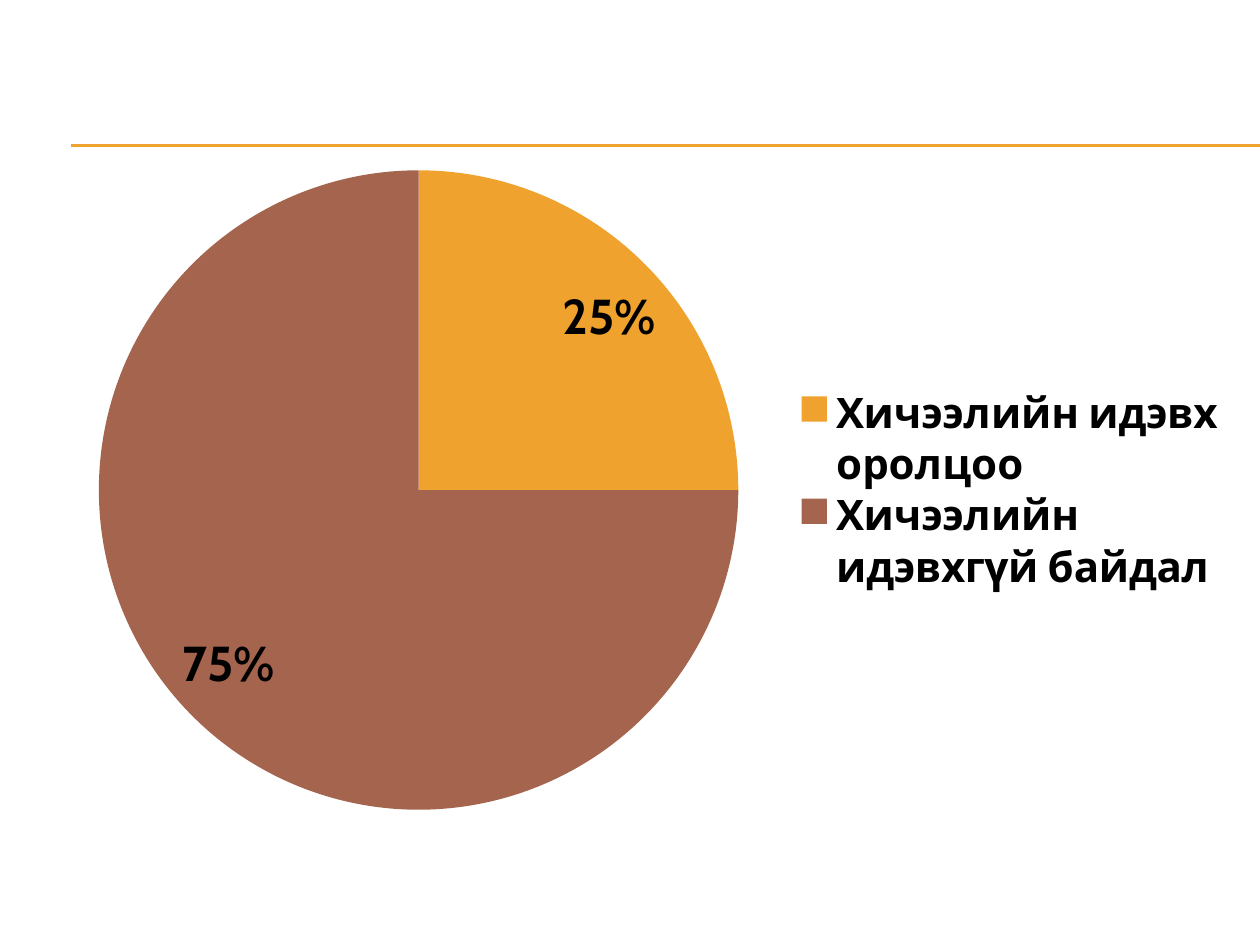
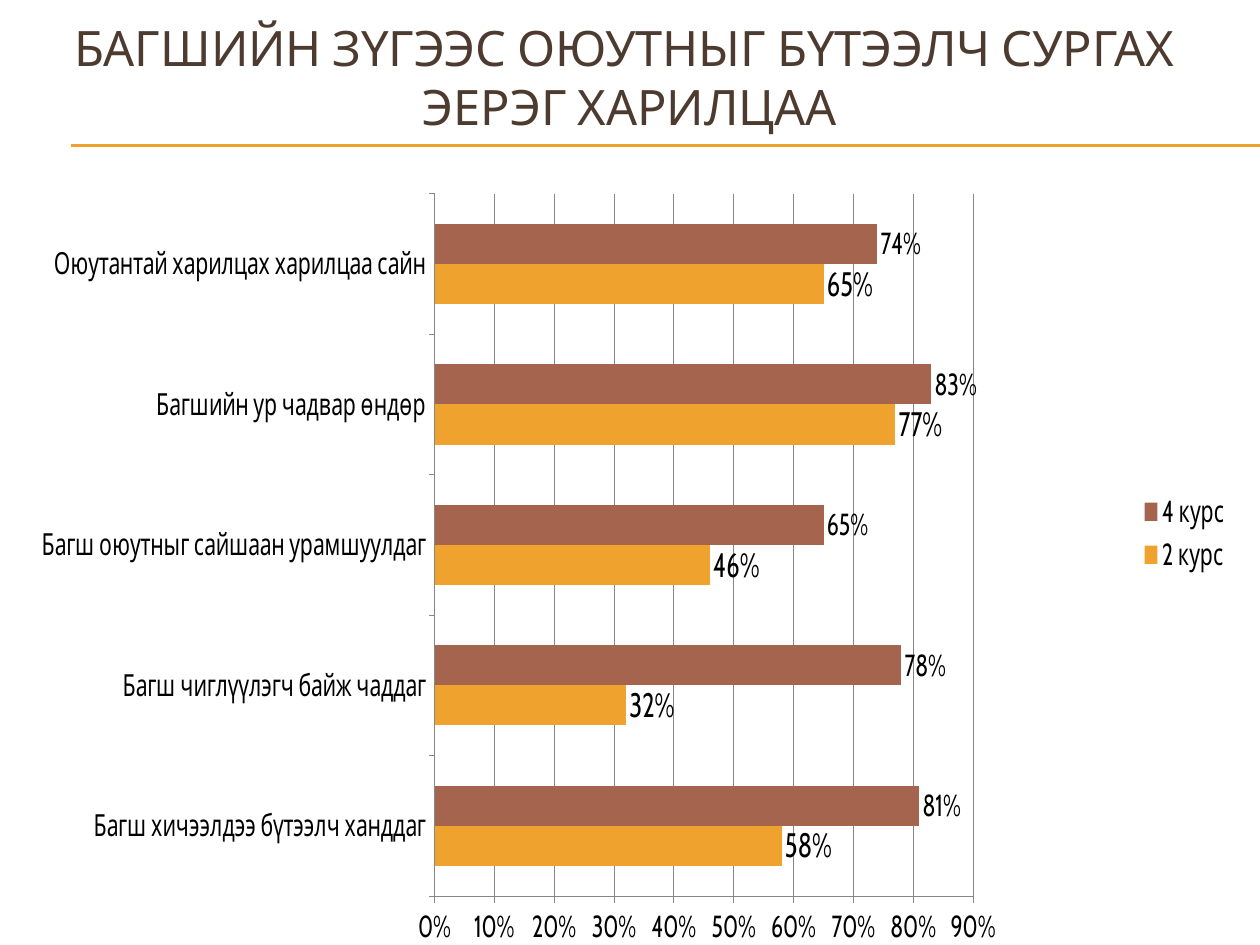
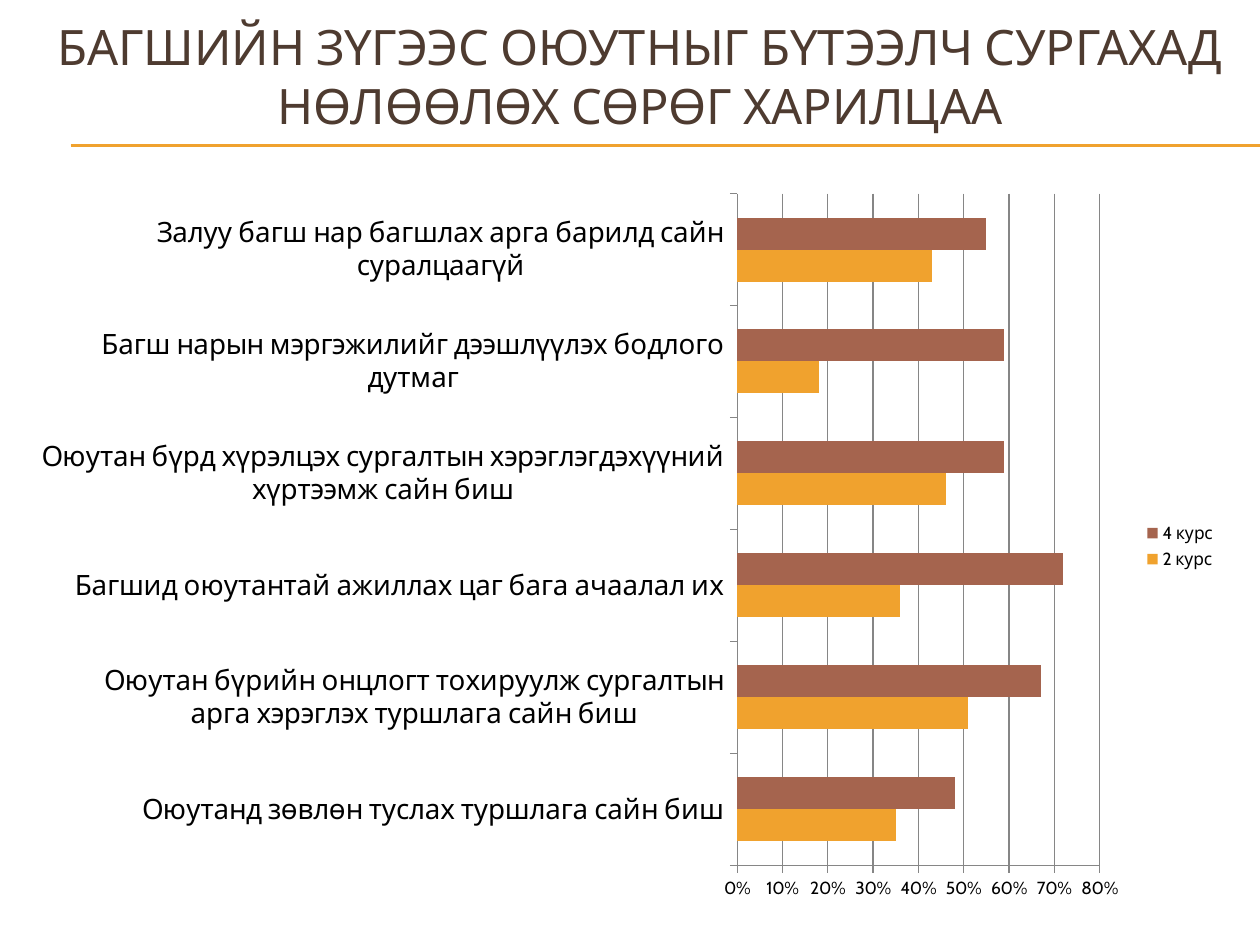
import pptx
import pptx.chart.data
import pptx.dml.color
import pptx.enum.chart
import pptx.enum.shapes
import pptx.enum.text
import pptx.oxml
import pptx.oxml.ns
import pptx.util

# Shared look
FONT = "Cabin"
GOLD, RUST, BROWN, BLACK, GREY = "F0A22E", "A5644E", "4E3B30", "000000", "868686"
TITLE_SIZE = 27.9
COLS, ROWS = 10, 7.5
LEFT = 0.33
RULES = (1.15, 1.16)

deck = pptx.Presentation()
deck.slide_width = pptx.util.Inches(10)
deck.slide_height = pptx.util.Inches(7.5)


def col(n):
    return int(deck.slide_width * n / COLS)


def row(n):
    return int(deck.slide_height * n / ROWS)


def grid(x, y, w, h):
    return col(x), row(y), col(w), row(h)


def color(code):
    return pptx.dml.color.RGBColor.from_string(code)


def style(font, size, code=BLACK, bold=False):
    font.name = FONT
    font.size = pptx.util.Pt(size)
    font.bold = bold
    font.color.rgb = color(code)


def paint(fill, code):
    fill.solid()
    fill.fore_color.rgb = color(code)


def add_rules(slide):
    """Draw the header rules and hand them to the master."""
    master = deck.slide_master.shapes.element
    for y in RULES:
        rule = slide.shapes.add_connector(
            pptx.enum.shapes.MSO_CONNECTOR.STRAIGHT,
            col(0.56), row(y), col(COLS), row(y))
        rule.line.color.rgb = color(GOLD)
        rule.line.width = pptx.util.Pt(0.75)
        rule.element.spPr.append(
            pptx.oxml.parse_xml("<a:effectLst %s/>" % pptx.oxml.ns.nsdecls("a")))
        master.insert_element_before(rule.element, "p:extLst")


def add_title(slide, area, lines):
    title = slide.shapes.title
    title.left, title.top, title.width, title.height = grid(*area)
    frame = title.text_frame
    frame.word_wrap = True
    frame.auto_size = pptx.enum.text.MSO_AUTO_SIZE.NONE
    frame.vertical_anchor = pptx.enum.text.MSO_ANCHOR.MIDDLE
    frame.margin_bottom = row(0.6)
    para = frame.paragraphs[0]
    para.alignment = pptx.enum.text.PP_ALIGN.CENTER
    for i, line in enumerate(lines):
        if i:
            para.add_line_break()
        run = para.add_run()
        run.text = line
        style(run.font, TITLE_SIZE, BROWN)


def set_place(chart, part, share):
    """Fix a chart part at shares (x, y, w, h) of the chart."""
    node = chart.element.find(".//" + pptx.oxml.ns.qn("c:" + part))
    old = node.find(pptx.oxml.ns.qn("c:layout"))
    if old is not None:
        node.remove(old)
    target = '<c:layoutTarget val="inner"/>' if part == "plotArea" else ""
    modes = "".join('<c:%sMode val="edge"/>' % k for k in "xy")
    sizes = "".join('<c:%s val="%s"/>' % pair for pair in zip("xywh", share))
    layout = pptx.oxml.parse_xml(
        "<c:layout %s><c:manualLayout>%s%s%s</c:manualLayout></c:layout>"
        % (pptx.oxml.ns.nsdecls("c"), target, modes, sizes))
    node.insert(0 if part == "plotArea" else 1, layout)


def add_chart(slide, kind, area, cats, series, size, key):
    data = pptx.chart.data.CategoryChartData(number_format="0%")
    data.categories = cats
    for name, vals in series:
        data.add_series(name, vals)
    chart = slide.shapes.add_chart(kind, *grid(*area), data).chart
    chart.has_title = False
    style(chart.font, size)
    chart.has_legend = True
    chart.legend.position = pptx.enum.chart.XL_LEGEND_POSITION.RIGHT
    chart.legend.include_in_layout = False
    style(chart.legend.font, key, bold=key > size)
    return chart


def add_labels(owner, size, spot, bold=False):
    labels = owner.data_labels
    labels.show_value = True
    labels.number_format = "0%"
    labels.number_format_is_linked = False
    labels.position = spot
    style(labels.font, size, bold=bold)


def add_pie(slide, area, cats, vals):
    chart = add_chart(slide, pptx.enum.chart.XL_CHART_TYPE.PIE, area, cats,
                      [("Series 1", vals)], 18, 24)
    pie = chart.plots[0].series[0]
    for i, code in enumerate((GOLD, RUST)):
        paint(pie.points[i].format.fill, code)
    add_labels(pie, 28, pptx.enum.chart.XL_LABEL_POSITION.BEST_FIT, True)
    return chart


def add_bars(slide, area, cats, second, fourth, top, size, cat_size):
    chart = add_chart(slide, pptx.enum.chart.XL_CHART_TYPE.BAR_CLUSTERED, area,
                      cats, [("2 курс", second), ("4 курс", fourth)],
                      size, size)
    bars = chart.plots[0]
    bars.vary_by_categories = False
    bars.gap_width = 150
    bars.overlap = 0
    for item, code in zip(bars.series, (GOLD, RUST)):
        paint(item.format.fill, code)
    # Axes
    values = chart.value_axis
    values.minimum_scale, values.maximum_scale = 0, top
    values.major_unit = 0.1
    values.has_major_gridlines = True
    values.major_gridlines.format.line.color.rgb = color(GREY)
    values.tick_labels.number_format = "0%"
    values.tick_labels.number_format_is_linked = False
    for axis, points in ((values, size), (chart.category_axis, cat_size)):
        axis.major_tick_mark = pptx.enum.chart.XL_TICK_MARK.OUTSIDE
        axis.format.line.color.rgb = color(GREY)
        style(axis.tick_labels.font, points)
    return chart


def main():
    bare, titled = deck.slide_layouts[6], deck.slide_layouts[5]

    # Share of active students
    slide = deck.slides.add_slide(bare)
    add_rules(slide)
    chart = add_pie(slide, (LEFT, 1.19, 9.5, 5.4),
                    ["Хичээлийн идэвх оролцоо", "Хичээлийн идэвхгүй байдал"],
                    [0.25, 0.75])
    set_place(chart, "plotArea", (0.04, 0.03, 0.55, 0.94))
    set_place(chart, "legend", (0.63, 0.35, 0.36, 0.3))

    # Positive attitudes
    slide = deck.slides.add_slide(titled)
    add_title(slide, (0.25, 0.42, 9.5, 0.92),
              ["БАГШИЙН ЗҮГЭЭС ОЮУТНЫГ БҮТЭЭЛЧ СУРГАХ ", "ЭЕРЭГ ХАРИЛЦАА"])
    chart = add_bars(
        slide, (LEFT, 1.17, 9.5, 6.33),
        ["Багш хичээлдээ бүтээлч ханддаг",
         "Багш чиглүүлэгч байж чаддаг",
         "Багш оюутныг сайшаан урамшуулдаг",
         "Багшийн ур чадвар өндөр",
         "Оюутантай харилцах харилцаа сайн"],
        [0.58, 0.32, 0.46, 0.77, 0.65], [0.81, 0.78, 0.65, 0.83, 0.74],
        0.9, 18, 18)
    set_place(chart, "plotArea", (0, 0.06, 0.67, 0.91))
    for item, size in zip(chart.plots[0].series, (20, 18)):
        add_labels(item, size, pptx.enum.chart.XL_LABEL_POSITION.OUTSIDE_END)

    # Negative attitudes
    slide = deck.slides.add_slide(titled)
    add_title(slide, (LEFT, 0.25, 9.5, 1.25),
              ["БАГШИЙН ЗҮГЭЭС ОЮУТНЫГ БҮТЭЭЛЧ СУРГАХАД НӨЛӨӨЛӨХ СӨРӨГ ХАРИЛЦАА"])
    add_bars(
        slide, (LEFT, 1.42, 9.42, 5.83),
        ["Оюутанд зөвлөн туслах туршлага сайн биш",
         "Оюутан бүрийн онцлогт тохируулж сургалтын арга хэрэглэх туршлага сайн биш",
         "Багшид оюутантай ажиллах цаг бага ачаалал их",
         "Оюутан бүрд хүрэлцэх сургалтын хэрэглэгдэхүүний хүртээмж сайн биш",
         "Багш нарын мэргэжилийг дээшлүүлэх бодлого дутмаг",
         "Залуу багш нар багшлах арга барилд сайн суралцаагүй"],
        [0.35, 0.51, 0.36, 0.46, 0.18, 0.43],
        [0.48, 0.67, 0.72, 0.59, 0.59, 0.55],
        0.8, 10, 16)

    deck.save("out.pptx")


if __name__ == "__main__":
    main()
